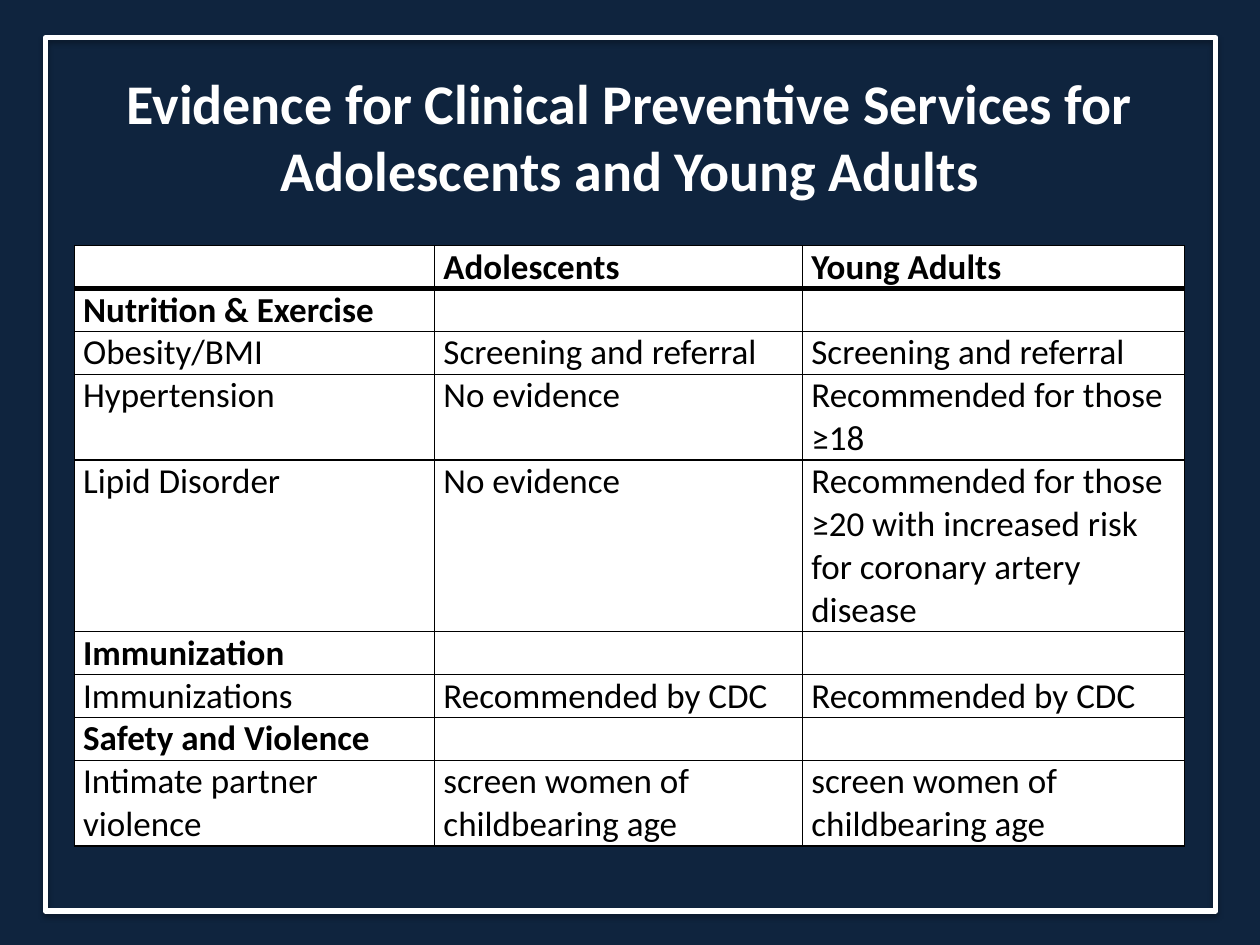
from lxml import etree
from pptx import Presentation
from pptx.dml.color import RGBColor
from pptx.enum.shapes import MSO_SHAPE
from pptx.enum.text import MSO_ANCHOR, PP_ALIGN
from pptx.oxml import parse_xml
from pptx.oxml.ns import qn
from pptx.util import Inches, Pt

RECTANGLE = MSO_SHAPE.RECTANGLE
TOP, MIDDLE, BOTTOM = MSO_ANCHOR.TOP, MSO_ANCHOR.MIDDLE, MSO_ANCHOR.BOTTOM
CENTER = PP_ALIGN.CENTER
DRAWING_NS = "http://schemas.openxmlformats.org/drawingml/2006/main"

THEME = {
    "font": "Calibri",
    "title_size": 32,
    "cell_size": 20,
    "white": RGBColor(0xFF, 0xFF, 0xFF),
    "black": RGBColor(0, 0, 0),
    "backdrop": [(0, RGBColor(0x0F, 0x24, 0x3E)), (0.19, RGBColor(0x10, 0x26, 0x40))],
}
LINE_HEIGHT = 0.34
COLUMN_WIDTHS = [2.86, 2.92, 3.03]

ROWS = [
    (1, True, ["", "Adolescents", "Young Adults"]),
    (1, True, ["Nutrition & Exercise", "", ""]),
    (1, False, ["Obesity/BMI", "Screening and referral", "Screening and referral"]),
    (2, False, ["Hypertension", "No evidence", "Recommended for those ≥18"]),
    (4, False, ["Lipid Disorder", "No evidence",
                "Recommended for those ≥20 with increased risk for coronary artery disease"]),
    (1, True, ["Immunization", "", ""]),
    (1, False, ["Immunizations", "Recommended by CDC", "Recommended by CDC"]),
    (1, True, ["Safety and Violence", "", ""]),
    (2, False, ["Intimate partner violence", "screen women of childbearing age",
                "screen women of childbearing age"]),
]


def style_text(paragraph, size, color, bold):
    font = paragraph.font
    font.name, font.size, font.bold = THEME["font"], Pt(size), bold
    font.color.rgb = color


def add_border(cell, side, points):
    line = etree.SubElement(cell._tc.get_or_add_tcPr(), qn(f"a:ln{side}"), w=str(Pt(points)))
    fill = etree.SubElement(line, qn("a:solidFill"))
    etree.SubElement(fill, qn("a:srgbClr"), val=str(THEME["black"]))


prs = Presentation()
prs.slide_width, prs.slide_height = Inches(10), Inches(7.5)
slide = prs.slides.add_slide(prs.slide_layouts[5])

backdrop = slide.background.fill
backdrop.gradient()
backdrop.gradient_angle = 90
for stop, (position, color) in zip(backdrop.gradient_stops, THEME["backdrop"]):
    stop.position = position
    stop.color.rgb = color

frame = slide.shapes.add_shape(RECTANGLE, Inches(0.36), Inches(0.3), Inches(9.29), Inches(6.93))
frame.fill.background()
frame.line.color.rgb = THEME["white"]
frame.line.width = Pt(3)
frame._element.spPr.append(parse_xml(
    f'<a:effectLst xmlns:a="{DRAWING_NS}">'
    f'<a:outerShdw blurRad="{Pt(3.1)}" dist="{Pt(1.8)}" dir="5400000" rotWithShape="0">'
    '<a:srgbClr val="000000"><a:alpha val="35000"/></a:srgbClr>'
    '</a:outerShdw></a:effectLst>'))
slide.shapes._spTree.insert(2, frame._element)

title = slide.shapes.title
title.left, title.top, title.width, title.height = (Inches(n) for n in (0.5, 0.52, 9, 1.11))
title.text_frame.text = "Evidence for Clinical Preventive Services for Adolescents and Young Adults"
title.text_frame.vertical_anchor = MIDDLE
title.text_frame.paragraphs[0].alignment = CENTER
style_text(title.text_frame.paragraphs[0], THEME["title_size"], THEME["white"], True)

total_lines = sum(lines for lines, _, _ in ROWS)
services = slide.shapes.add_table(
    len(ROWS), len(COLUMN_WIDTHS), Inches(0.59), Inches(1.95),
    Inches(sum(COLUMN_WIDTHS)), Inches(total_lines * LINE_HEIGHT)).table
services.first_row = services.horz_banding = False
for column, width in zip(services.columns, COLUMN_WIDTHS):
    column.width = Inches(width)

for r, (lines, bold, texts) in enumerate(ROWS):
    services.rows[r].height = Inches(lines * LINE_HEIGHT)
    for c, text in enumerate(texts):
        cell = services.cell(r, c)
        cell.text = text
        cell.margin_left = cell.margin_right = Inches(0.07)
        cell.margin_top = cell.margin_bottom = 0
        cell.vertical_anchor = BOTTOM if lines == 1 else TOP
        style_text(cell.text_frame.paragraphs[0], THEME["cell_size"], THEME["black"], bold)
        add_border(cell, "L", 1)
        add_border(cell, "R", 1)
        add_border(cell, "T", 3 if r == 1 else 1)
        add_border(cell, "B", 3 if r == 0 else 1)
        cell.fill.solid()
        cell.fill.fore_color.rgb = THEME["white"]

prs.save("out.pptx")
